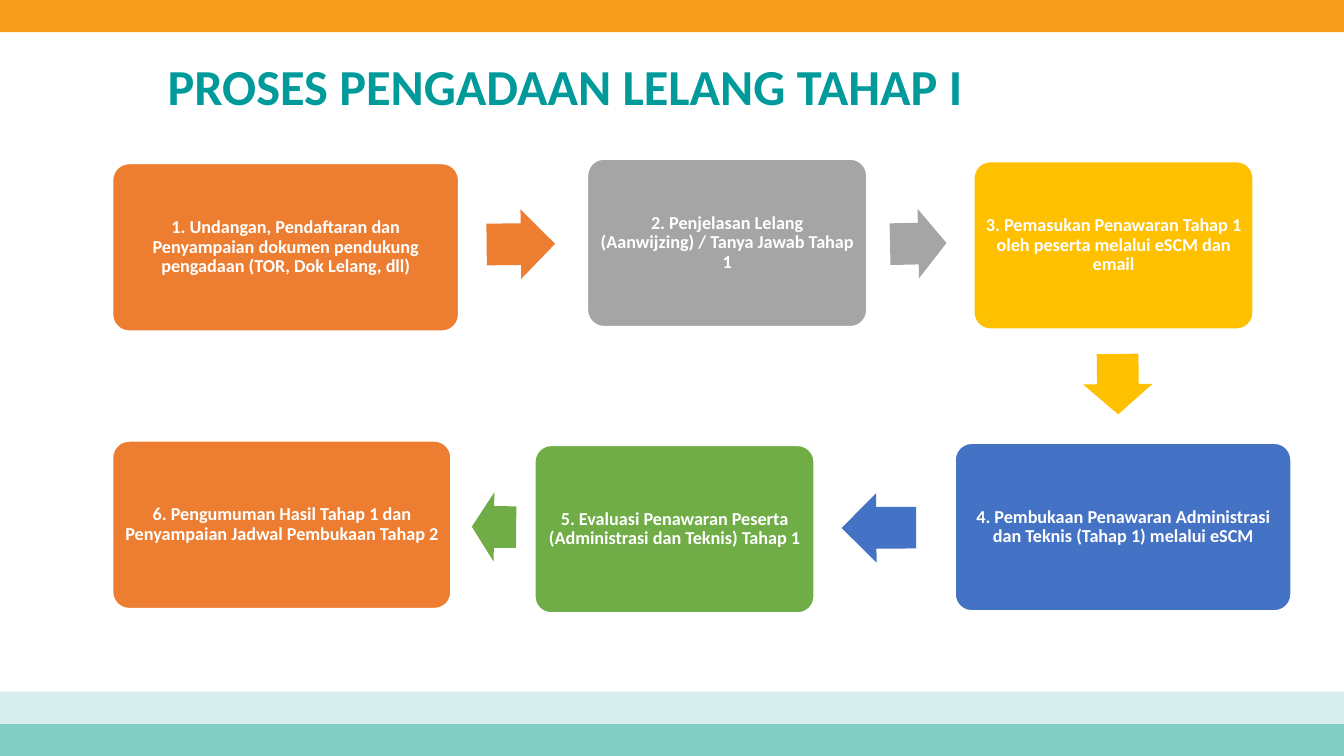
from pptx import Presentation
from pptx.dml.color import RGBColor
from pptx.enum.shapes import MSO_SHAPE as Shape
from pptx.enum.text import MSO_ANCHOR as Anchor, PP_ALIGN as Align
from pptx.util import Pt

COLORS = {
    "teal": "009A9B", "mint": "81CEC5", "pale": "D6EEEE", "amber": "F99D1C",
    "orange": "ED7D31", "gray": "A5A5A5", "yellow": "FFC000",
    "blue": "4472C4", "green": "70AD47", "white": "FFFFFF",
}
WIDTH, HEIGHT = 960, 540
BAND_HEIGHT = 23
STEP_HEIGHT, ARROW_HEIGHT = 120.2, 49.6

STEPS = [
    ("1. Undangan, Pendaftaran dan Penyampaian dokumen pendukung pengadaan (TOR, Dok Lelang, dll)",
     "orange", 80.2, 116.6, 247.7),
    ("2. Penjelasan Lelang (Aanwijzing) / Tanya Jawab Tahap 1",
     "gray", 419.4, 113.4, 200),
    ("3. Pemasukan Penawaran Tahap 1 oleh peserta melalui eSCM dan email",
     "yellow", 695.4, 115.2, 200),
    ("4. Pembukaan Penawaran Administrasi dan Teknis (Tahap 1) melalui eSCM",
     "blue", 682, 316.4, 240.4),
    ("5. Evaluasi Penawaran Peserta (Administrasi dan Teknis) Tahap 1",
     "green", 381.8, 317.9, 200),
    ("6. Pengumuman Hasil Tahap 1 dan Penyampaian Jadwal Pembukaan Tahap 2",
     "orange", 80.2, 314.8, 242.2),
]
ARROWS = [
    ("orange", 347.6, 149.6, 48.9, 359.4),
    ("gray", 635.8, 149.2, 40.3, 358.8),
    ("yellow", 776.9, 249.6, 43.2, 89.4),
    ("blue", 601.2, 352.2, 53.2, 179.7),
    ("green", 337, 351.6, 31.7, 180.6),
]


def rgb(name):
    """Return the named colour."""
    return RGBColor.from_string(COLORS[name])


def write(shape, text, size, color, align=Align.LEFT, inset=(7.2, 3.6)):
    """Put one bold, vertically centred paragraph into a shape."""
    frame = shape.text_frame
    frame.word_wrap = True
    frame.vertical_anchor = Anchor.MIDDLE
    frame.margin_left = frame.margin_right = Pt(inset[0])
    frame.margin_top = frame.margin_bottom = Pt(inset[1])
    paragraph = frame.paragraphs[0]
    paragraph.alignment = align
    paragraph.line_spacing = 0.9
    run = paragraph.add_run()
    run.text = text
    run.font.name = "Calibri"
    run.font.size = Pt(size)
    run.font.bold = True
    run.font.color.rgb = rgb(color)


def add_block(slide, kind, color, left, top, width, height):
    """Add a plain filled shape without outline or shadow."""
    block = slide.shapes.add_shape(kind, Pt(left), Pt(top), Pt(width), Pt(height))
    block.shadow.inherit = False
    block.fill.solid()
    block.fill.fore_color.rgb = rgb(color)
    block.line.fill.background()
    return block


def add_bands(slide, width, height):
    """Draw the bands along the top and bottom edges."""
    for color, top in (("mint", height - BAND_HEIGHT),
                       ("pale", height - 2 * BAND_HEIGHT), ("amber", 0)):
        add_block(slide, Shape.RECTANGLE, color, 0, top, width, BAND_HEIGHT)


def add_title(slide, left, top, width, height):
    """Add the heading in its box."""
    title = slide.shapes.add_textbox(Pt(left), Pt(top), Pt(width), Pt(height))
    write(title, "PROSES PENGADAAN LELANG TAHAP I", 36, "teal")


def add_step(slide, text, color, left, top, width):
    """Add one rounded process step with its text."""
    step = add_block(slide, Shape.ROUNDED_RECTANGLE, color, left, top, width, STEP_HEIGHT)
    step.adjustments[0] = 0.1
    step.line.color.rgb = rgb("white")
    step.line.width = Pt(1.5)
    write(step, text, 13, "white", align=Align.CENTER, inset=(3.6, 3.6))


def add_arrow(slide, color, left, top, width, rotation):
    """Add one block arrow turned towards the next step."""
    arrow = add_block(slide, Shape.RIGHT_ARROW, color, left, top, width, ARROW_HEIGHT)
    arrow.adjustments[0] = 0.6
    arrow.adjustments[1] = 0.5
    arrow.rotation = rotation


def main():
    """Build and save the process slide."""
    deck = Presentation()
    deck.slide_width, deck.slide_height = Pt(WIDTH), Pt(HEIGHT)
    slide = deck.slides.add_slide(deck.slide_layouts[6])
    add_bands(slide, WIDTH, HEIGHT)
    add_title(slide, 112.6, 35.3, 713.5, 56.2)
    for step in STEPS:
        add_step(slide, *step)
    for arrow in ARROWS:
        add_arrow(slide, *arrow)
    deck.save("out.pptx")


if __name__ == "__main__":
    main()
